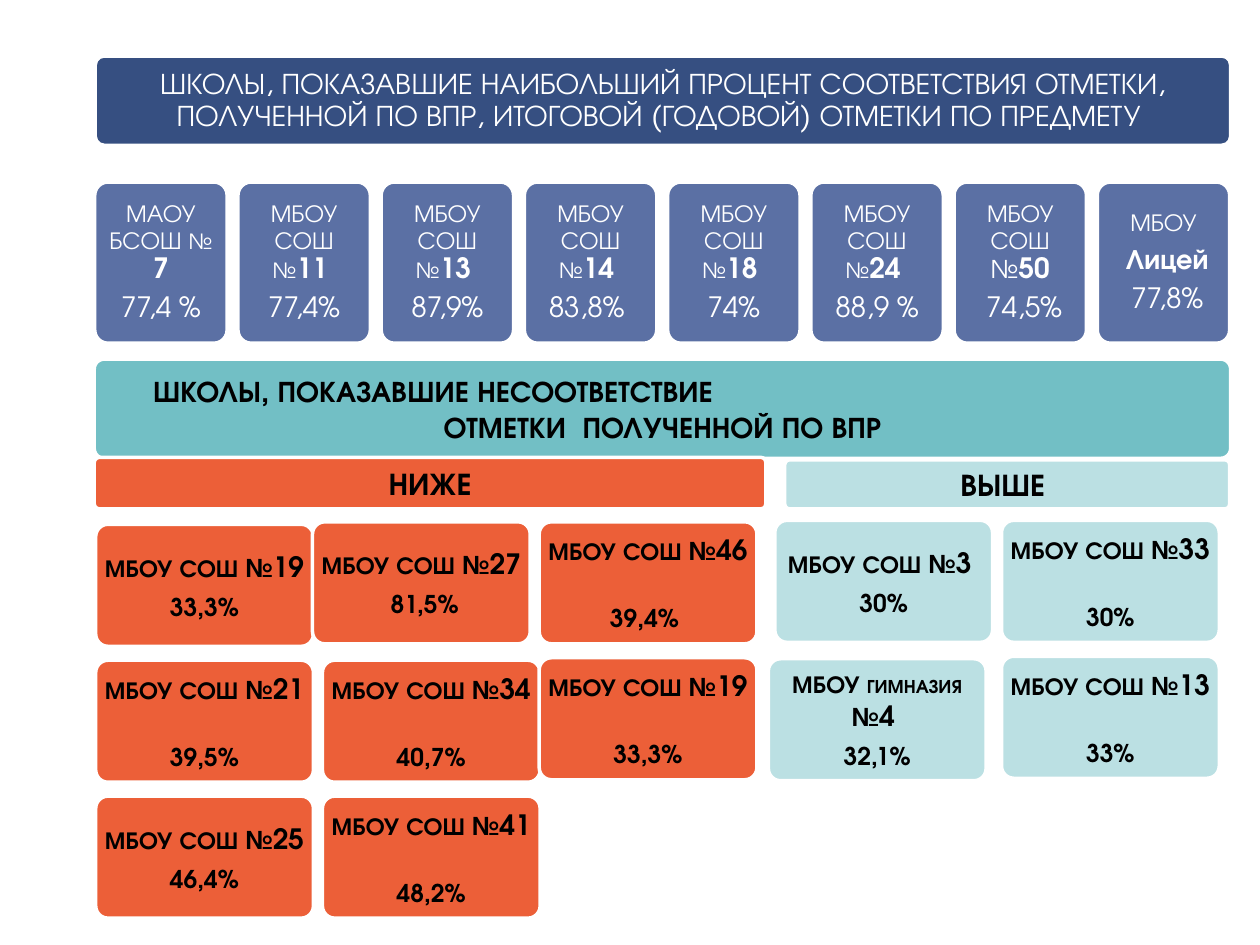
from lxml import etree
from pptx import Presentation
from pptx import util as u
from pptx.dml.color import RGBColor
from pptx.enum import shapes, text
from pptx.oxml.ns import qn

FONT = "TeX Gyre Adventor"
WHITE, BLACK = "FFFFFF", "000000"
NAVY, BLUE, TEAL, ORANGE, PALE = "002060", "3F5795", "72BFC5", "EC5F38", "BBE0E3"
CENTER, LEFT = text.PP_ALIGN.CENTER, text.PP_ALIGN.LEFT
CARD_WIDTH, CARD_HEIGHT = 4.39, 2.46
COLUMN_STEP, ROW_STEP = 4.57, 2.74
BLANK_LINE = 16


def color(value):
    return RGBColor.from_string(value)


def add_panel(slide, box, fill, opacity=None):
    """Rounded panel with a white outline; opacity is in percent."""
    shape = slide.shapes.add_shape(
        shapes.MSO_SHAPE.ROUNDED_RECTANGLE, *(u.Cm(length) for length in box))
    shape.adjustments[0] = 0.1
    shape.shadow.inherit = False
    shape.fill.solid()
    shape.fill.fore_color.rgb = color(fill)
    shape.line.color.rgb = color(WHITE)
    shape.line.width = u.Pt(2)
    if opacity:
        tint = shape.element.spPr.find(qn("a:solidFill"))[0]
        etree.SubElement(tint, qn("a:alpha"), val=str(opacity * 1000))
    return shape


def prepare_frame(shape, margin):
    frame = shape.text_frame
    frame.word_wrap = True
    frame.auto_size = text.MSO_AUTO_SIZE.NONE
    frame.vertical_anchor = text.MSO_ANCHOR.MIDDLE
    frame.margin_left = frame.margin_right = u.Cm(margin)
    frame.margin_top = frame.margin_bottom = u.Cm(margin)
    return frame


def write(shape, paragraphs, ink, bold=False, spacing=1.0, margin=0.15):
    """Each paragraph is a list of runs: (words, size) or (words, size, bold)."""
    frame = prepare_frame(shape, margin)
    for number, runs in enumerate(paragraphs):
        paragraph = frame.add_paragraph() if number else frame.paragraphs[0]
        paragraph.alignment = CENTER
        paragraph.line_spacing = spacing
        paragraph.space_before = u.Pt(0)
        paragraph.space_after = u.Pt(5)
        for words, size, *strong in runs:
            run = paragraph.add_run()
            run.text = words
            run.font.name = FONT
            run.font.size = u.Pt(size)
            run.font.bold = strong[0] if strong else bold
            run.font.color.rgb = color(ink)
    return frame


def add_title(slide, box):
    panel = add_panel(slide, box, NAVY, 79)
    title = slide.shapes.title
    title.element.addprevious(panel.element)
    title.left, title.top, title.width, title.height = (u.Cm(length) for length in box)
    write(title, [[("ШКОЛЫ, ПОКАЗАВШИЕ НАИБОЛЬШИЙ ПРОЦЕНТ СООТВЕТСТВИЯ ОТМЕТКИ, "
                    "ПОЛУЧЕННОЙ ПО ВПР, ИТОГОВОЙ (ГОДОВОЙ) ОТМЕТКИ ПО ПРЕДМЕТУ ", 17)]],
          WHITE, spacing=0.9, margin=0.18)


def add_matching_schools(slide, box, schools):
    """Row of equal cards spread over the width of the box."""
    left, top, width, height = box
    card_width = 2.67
    step = (width - card_width) / (len(schools) - 1)
    for number, (names, percent) in enumerate(schools):
        card = add_panel(slide, (left + number * step, top, card_width, height), BLUE, 85)
        write(card, names + [[(percent, 16)]], WHITE, spacing=0.9)


def add_mismatch_banner(slide, box):
    banner = add_panel(slide, box, TEAL)
    frame = write(banner, [[("ШКОЛЫ, ПОКАЗАВШИЕ НЕСООТВЕТСТВИЕ", 17)],
                           [("ОТМЕТКИ  ПОЛУЧЕННОЙ ПО ВПР", 17)]],
                  BLACK, bold=True, margin=0.18)
    first = frame.paragraphs[0]
    first.alignment = LEFT
    first.space_after = u.Pt(0)
    first._p.get_or_add_pPr().set("marL", str(u.Cm(0.95)))


def add_group(slide, heading_box, heading, fill, origin, schools):
    """Heading bar and a grid of cards starting at the origin."""
    bar = add_panel(slide, heading_box, fill)
    write(bar, [[(heading, 18)]], BLACK, bold=True, margin=0.18)
    left, top = origin
    for column, row, shift_x, shift_y, name, percent, gap in schools:
        card = add_panel(slide, (left + column * COLUMN_STEP + shift_x,
                                 top + row * ROW_STEP + shift_y,
                                 CARD_WIDTH, CARD_HEIGHT), fill)
        frame = write(card, [name, [(percent, 14)]], BLACK, bold=True, margin=0.1)
        frame.paragraphs[1].space_before = u.Pt(gap)


def numbered(number):
    return [("МБОУ СОШ №", 14), (number, 16)]


def small_numbered(number):
    return [[("МБОУ СОШ ", 14), ("№", 12), (number + " ", 16, True)]]


MATCHING = [
    ([[("МАОУ БСОШ ", 14), ("№ ", 12), ("7", 16, True)]], "77,4 %"),
    (small_numbered("11"), "77,4%"),
    (small_numbered("13"), "87,9%"),
    (small_numbered("14"), "83,8% "),
    (small_numbered("18"), "74%"),
    (small_numbered("24"), "88,9 %"),
    ([[("МБОУ СОШ №", 14), ("50", 16, True)]], " 74,5%"),
    ([[("МБОУ", 14)], [(" Лицей", 16, True)]], " 77,8%"),
]

# Column, row, shift right, shift down, name, percent, gap above the percent
LOWER = [
    (0, 0, 0, 0, numbered("19"), "33,3%", 0),
    (0, 1, 0, 0, numbered("21"), "39,5%", BLANK_LINE),
    (0, 2, 0, 0, numbered("25"), "46,4%", 0),
    (1, 0, -0.2, -0.05, numbered("27"), " 81,5%", 0),
    (1, 1, 0, 0, numbered("34"), "40,7%", BLANK_LINE),
    (1, 2, 0, 0, numbered("41"), "48,2%", BLANK_LINE),
    (2, 0, -0.2, -0.05, numbered("46"), "39,4% ", BLANK_LINE),
    (2, 1, -0.2, -0.05, numbered("19"), "33,3%", BLANK_LINE),
]
HIGHER = [
    (0, 0, 0, 0, numbered("3 "), "30%", 0),
    (0, 1, -0.13, 0.05,
     [("МБОУ ", 14), ("ГИМНАЗИЯ", 11), (" №", 14), ("4 ", 16)], "32,1%", 0),
    (1, 0, 0, 0, numbered("33"), "30%", BLANK_LINE),
    (1, 1, 0, 0, numbered("13"), "33%", BLANK_LINE),
]


def main():
    presentation = Presentation()
    presentation.slide_width, presentation.slide_height = u.Cm(25.4), u.Cm(19.05)
    slide = presentation.slides.add_slide(presentation.slide_layouts[5])

    # Schools whose marks match
    add_title(slide, (1.92, 1.13, 22.89, 1.8))
    add_matching_schools(slide, (1.91, 3.67, 22.88, 3.25), MATCHING)

    # Schools whose marks differ
    add_mismatch_banner(slide, (1.9, 7.24, 22.91, 2))
    add_group(slide, (1.9, 9.22, 13.54, 1.04), "НИЖЕ", ORANGE, (1.93, 10.57), LOWER)
    add_group(slide, (15.82, 9.27, 8.97, 0.99), "ВЫШЕ ", PALE, (15.62, 10.49), HIGHER)

    presentation.save("out.pptx")


if __name__ == "__main__":
    main()
